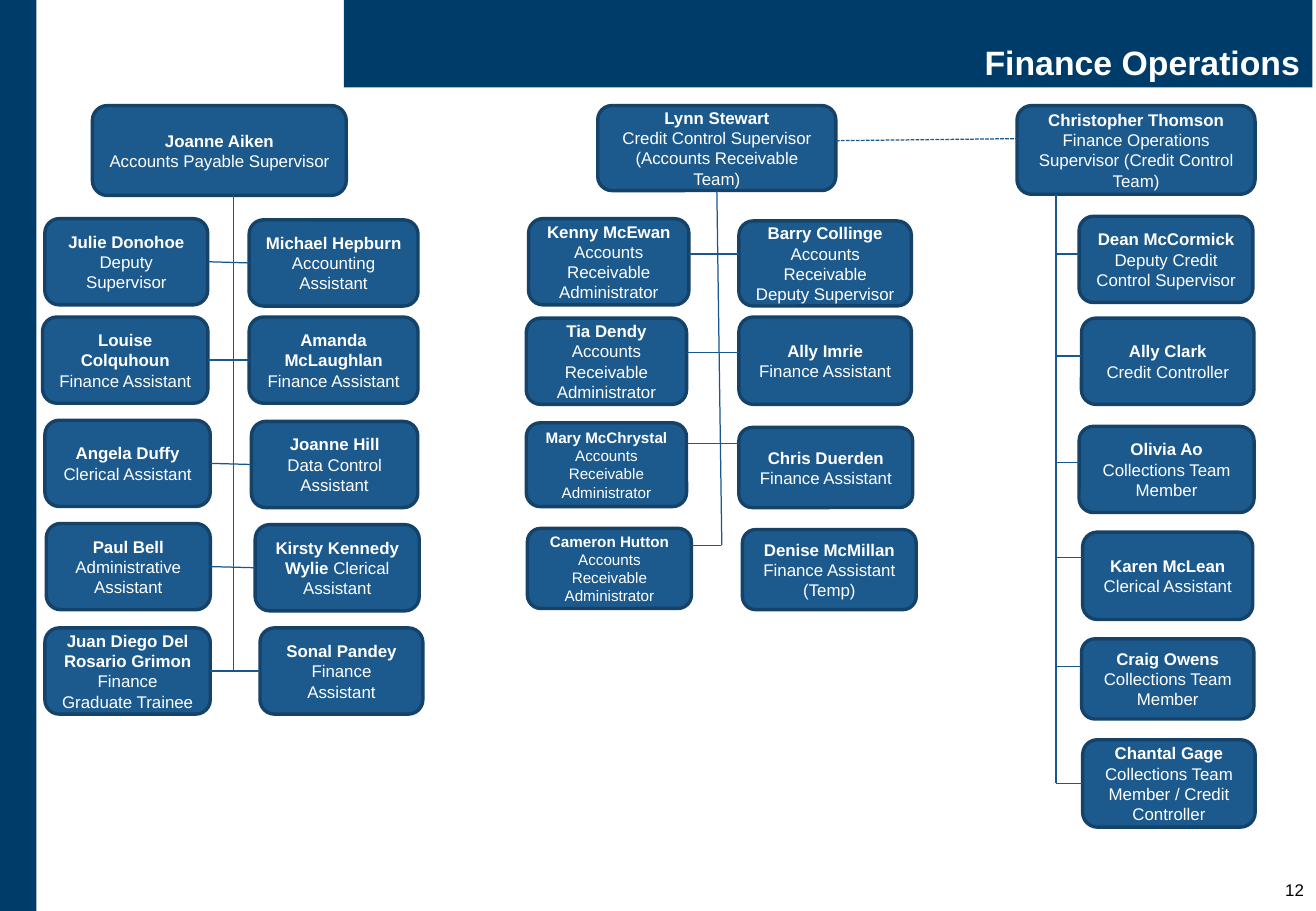
import pptx
import pptx.dml.color
import pptx.enum.dml
import pptx.enum.shapes
import pptx.enum.text
import pptx.oxml.xmlchemy
import pptx.util

Pt = pptx.util.Pt
ALIGN = pptx.enum.text.PP_ALIGN
ANCHOR = pptx.enum.text.MSO_ANCHOR
SHAPES = pptx.enum.shapes.MSO_SHAPE
LEFT, BOTTOM, RIGHT = 1, 2, 3

COLORS = {
    "banner": "003C69",
    "card": "1C598C",
    "card_edge": "154268",
    "link": "19578C",
    "light": "FFFFFF",
    "dark": "000000",
}

SUPERVISORS = {
    "payable": ("Joanne Aiken", "Accounts Payable Supervisor", 54.7, 62.6, 150.5, 53.3),
    "receivable": ("Lynn Stewart", "Credit Control Supervisor (Accounts Receivable Team)",
                   354.2, 62.6, 141.1, 50.4),
    "credit": ("Christopher Thomson", "Finance Operations Supervisor (Credit Control Team)",
               602.6, 62.6, 141.1, 52.6),
}

PAYABLE_PAIRS = [
    (("Julie Donohoe", "Deputy Supervisor", 26.6, 129.6, 96.5, 51.1),
     ("Michael Hepburn", "Accounting Assistant", 147.6, 130.3, 100.1, 51.1)),
    (("Louise Colquhoun", "Finance Assistant", 25.2, 187.9, 98, 51.1),
     ("Amanda McLaughlan", "Finance Assistant", 147.6, 187.9, 100.1, 51.1)),
    (("Angela Duffy", "Clerical Assistant", 26.6, 249.1, 98, 51.1),
     ("Joanne Hill", "Data Control Assistant", 149, 249.8, 98.6, 51.1)),
    (("Paul Bell", "Administrative Assistant", 27.4, 310.3, 97.2, 51.1),
     ("Kirsty Kennedy Wylie ", "Clerical Assistant", 151.2, 311, 97.2, 51.1)),
    (("Juan Diego Del Rosario Grimon", "Finance Graduate Trainee", 26.6, 372.2, 98, 51.1),
     ("Sonal Pandey", "Finance Assistant", 154.1, 372.2, 96.5, 51.1)),
]

RECEIVABLE_TEAM = [
    ("Kenny McEwan", "Accounts Receivable Administrator", 313.2, 129.6, 95, 51.1),
    ("Barry Collinge", "Accounts Receivable Deputy Supervisor", 437.8, 131, 102.2, 50.4),
    ("Tia Dendy", "Accounts Receivable Administrator", 311.8, 188.6, 95, 51.1),
    ("Ally Imrie", "Finance Assistant", 437.8, 187.9, 102.2, 51.8),
    ("Mary McChrystal", "Accounts Receivable Administrator", 311.8, 250.6, 95, 49.7, 9),
    ("Chris Duerden", "Finance Assistant", 437.8, 253.4, 103, 47.5),
    ("Cameron Hutton", "Accounts Receivable Administrator", 312.5, 313.2, 97.2, 47.5, 9),
    ("Denise McMillan", "Finance Assistant (Temp)", 439.9, 313.9, 103, 47.5),
]

CREDIT_TEAM = [
    ("Dean McCormick", "Deputy Credit Control Supervisor", 639.4, 128.2, 103, 51.1),
    ("Ally Clark", "Credit Controller", 640.8, 188.6, 102.2, 51.1),
    ("Olivia Ao", "Collections Team Member", 639.4, 252.7, 103.7, 51.1),
    ("Karen McLean", "Clerical Assistant", 641.5, 315.4, 100.8, 51.8),
    ("Craig Owens", "Collections Team Member", 640.8, 378.7, 102.2, 47.5),
    ("Chantal Gage", "Collections Team Member / Credit Controller", 641.5, 438.5, 102.2, 51.8),
]

PAYABLE_TRUNK_X, CREDIT_TRUNK_X = 138.2, 625.7
RECEIVABLE_BRANCHES = [(408.2, 437.8, 150.5), (406.8, 437.8, 208.8),
                       (406.8, 437.8, 262.8), (409.7, 427.3, 323.3)]
CREDIT_BRANCHES = [(639.4, 150.5), (640.8, 211), (639.4, 274), (641.5, 330.5), (640.8, 395.3)]


def rgb(name):
    return pptx.dml.color.RGBColor.from_string(COLORS[name])


def apply(target, formats):
    for key, value in formats.items():
        setattr(target, key, value)


def add_run(paragraph, text, size, color, bold=False):
    run = paragraph.add_run()
    run.text = text
    apply(run.font, {"name": "Arial", "size": Pt(size), "bold": bold})
    run.font.color.rgb = rgb(color)


def add_block(slide, kind, left, top, width, height, fill, edge=None):
    block = slide.shapes.add_shape(kind, Pt(left), Pt(top), Pt(width), Pt(height))
    block.shadow.inherit = False
    block.fill.solid()
    block.fill.fore_color.rgb = rgb(fill)
    if edge:
        block.line.color.rgb = rgb(edge)
        block.line.width = Pt(2)
    else:
        block.line.fill.background()
    return block


def add_card(slide, name, role, left, top, width, height, size=10):
    card = add_block(slide, SHAPES.ROUNDED_RECTANGLE, left, top, width, height,
                     "card", "card_edge")
    frame = card.text_frame
    apply(frame, {"word_wrap": True, "vertical_anchor": ANCHOR.MIDDLE})
    name_line = frame.paragraphs[0]
    role_line = name_line if name.endswith(" ") else frame.add_paragraph()
    add_run(name_line, name, size, "light", True)
    add_run(role_line, role, size, "light")
    for paragraph in frame.paragraphs:
        paragraph.alignment = ALIGN.CENTER
    return card


def add_link(slide, x1=0, y1=0, x2=0, y2=0, start=None, end=None, dashed=False):
    link = slide.shapes.add_connector(pptx.enum.shapes.MSO_CONNECTOR.STRAIGHT,
                                      Pt(x1), Pt(y1), Pt(x2), Pt(y2))
    link.line.color.rgb = rgb("link")
    link.line.width = Pt(0.75)
    if dashed:
        link.line.dash_style = pptx.enum.dml.MSO_LINE.SQUARE_DOT
    link._element.spPr.append(pptx.oxml.xmlchemy.OxmlElement("a:effectLst"))
    if start:
        link.begin_connect(*start)
    if end:
        link.end_connect(*end)


def add_frame(slide):
    add_block(slide, SHAPES.RECTANGLE, 0, 0, 21.6, 540, "banner")
    banner = add_block(slide, SHAPES.RECTANGLE, 203.8, 0, 573.8, 51.8, "banner")
    apply(banner.text_frame, {"word_wrap": True, "vertical_anchor": ANCHOR.BOTTOM,
                              "margin_left": Pt(5.76), "margin_right": Pt(7.2),
                              "margin_top": Pt(2.88), "margin_bottom": Pt(2.88)})
    title = banner.text_frame.paragraphs[0]
    apply(title, {"alignment": ALIGN.RIGHT, "line_spacing": 0.9})
    add_run(title, "Finance Operations", 20, "light", True)

    number_box = slide.shapes.add_textbox(Pt(717.1), Pt(517.7), Pt(62.6), Pt(22.3))
    number_box.text_frame.word_wrap = True
    number = number_box.text_frame.paragraphs[0]
    number.alignment = ALIGN.RIGHT
    add_run(number, "12", 10, "dark")


def add_payable(slide):
    add_card(slide, *SUPERVISORS["payable"])
    add_link(slide, PAYABLE_TRUNK_X, 115.9, PAYABLE_TRUNK_X, 398.2)
    for left_person, right_person in PAYABLE_PAIRS:
        left_card = add_card(slide, *left_person)
        right_card = add_card(slide, *right_person)
        add_link(slide, start=(left_card, RIGHT), end=(right_card, LEFT))


def add_receivable(slide):
    supervisor = add_card(slide, *SUPERVISORS["receivable"])
    for person in RECEIVABLE_TEAM:
        add_card(slide, *person)
    add_link(slide, x2=427.7, y2=323.3, start=(supervisor, BOTTOM))
    for left, right, y in RECEIVABLE_BRANCHES:
        add_link(slide, left, y, right, y)


def add_credit(slide):
    add_card(slide, *SUPERVISORS["credit"])
    cards = [add_card(slide, *person) for person in CREDIT_TEAM]
    add_link(slide, CREDIT_TRUNK_X, 115.2, CREDIT_TRUNK_X, 464.4)
    for right, y in CREDIT_BRANCHES:
        add_link(slide, CREDIT_TRUNK_X, y, right, y)
    add_link(slide, CREDIT_TRUNK_X, 464.4, 641.5, 464.4, end=(cards[-1], LEFT))


def main():
    deck = pptx.Presentation()
    apply(deck, {"slide_width": Pt(779.76), "slide_height": Pt(540)})
    slide = deck.slides.add_slide(deck.slide_layouts[6])
    add_frame(slide)
    add_payable(slide)
    add_receivable(slide)
    add_credit(slide)
    add_link(slide, 495.3, 83.4, 602.6, 82.2, dashed=True)
    deck.save("out.pptx")


if __name__ == "__main__":
    main()
